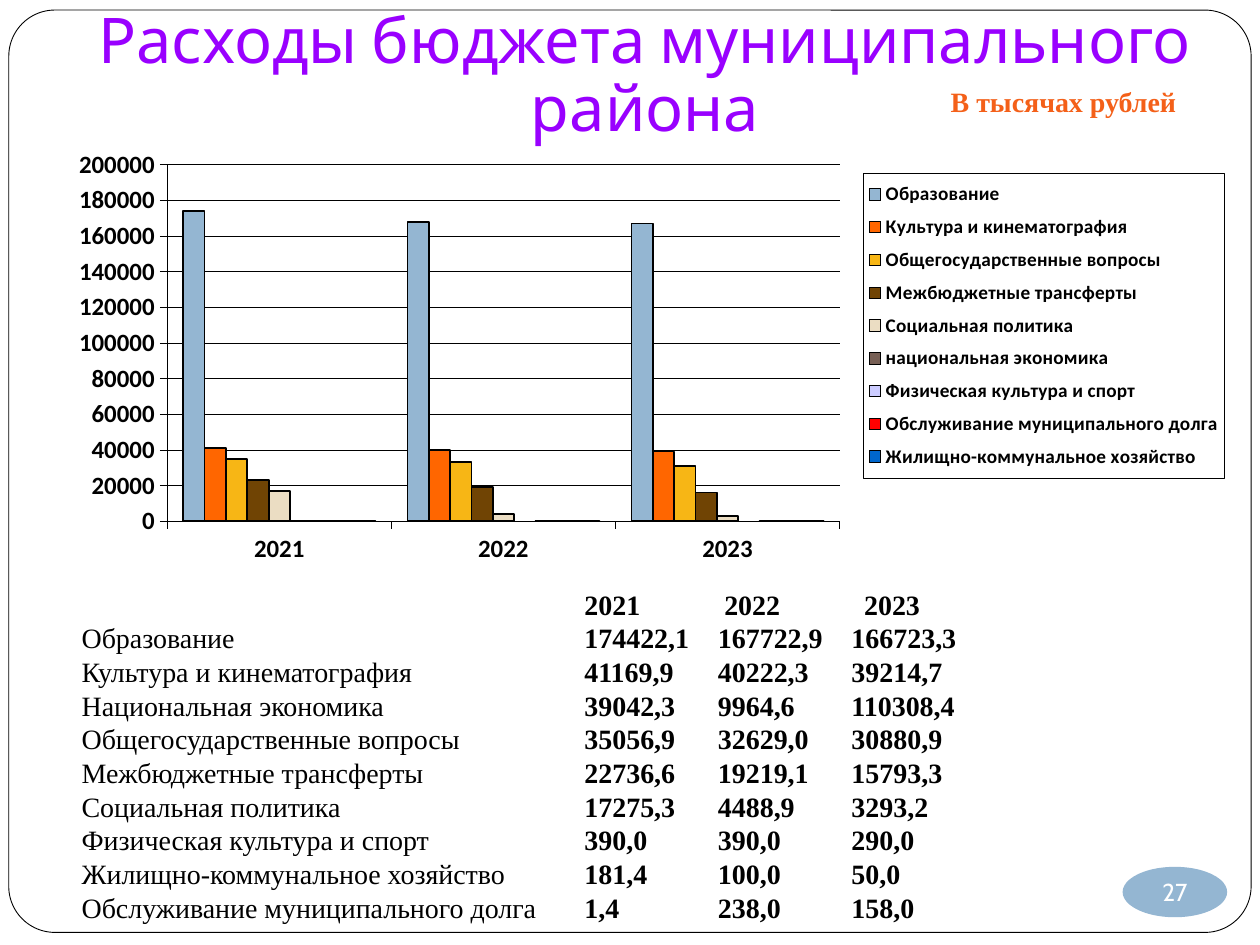
from lxml.etree import SubElement
from pptx import Presentation
from pptx.chart.data import CategoryChartData
from pptx.dml.color import RGBColor
from pptx.enum.chart import XL_CHART_TYPE, XL_LEGEND_POSITION, XL_TICK_LABEL_POSITION, XL_TICK_MARK
from pptx.enum.shapes import MSO_SHAPE
from pptx.enum.text import MSO_ANCHOR, PP_ALIGN
from pptx.oxml.ns import qn
from pptx.util import Inches, Pt

COLORS = {"black": "000000", "white": "FFFFFF", "title": "9900FF", "badge": "94B6D2"}
UNIT_GRADIENT = [(0, "FFA988"), (75, "F46019"), (100, "D85200")]
YEARS = ["2021", "2022", "2023"]
SERIES = [
    ("Образование", "94B6D2", (174000, 168000, 167000)),
    ("Культура и кинематография", "FF6600", (41000, 40000, 39000)),
    ("Общегосударственные вопросы", "F7B615", (35000, 33000, 31000)),
    ("Межбюджетные трансферты", "704404", (23000, 19000, 16000)),
    ("Социальная политика", "EBDDC3", (17000, 4000, 3000)),
    ("национальная экономика", "775F55", (0, None, None)),
    ("Физическая культура и спорт", "CCCCFF", (0, 0, 0)),
    ("Обслуживание муниципального долга", "FF0000", (0, 0, 0)),
    ("Жилищно-коммунальное хозяйство", "0066CC", (0, 0, 0)),
]
EXPENSES = [
    ("Образование", "174422,1", "167722,9", "166723,3"),
    ("Культура и кинематография", "41169,9", "40222,3", "39214,7"),
    ("Национальная экономика", "39042,3", "9964,6", "110308,4"),
    ("Общегосударственные вопросы", "35056,9", "32629,0", "30880,9"),
    ("Межбюджетные трансферты", "22736,6", "19219,1", "15793,3"),
    ("Социальная политика", "17275,3", "4488,9", "3293,2"),
    ("Физическая культура и спорт", "390,0", "390,0", "290,0"),
    ("Жилищно-коммунальное хозяйство", "181,4", "100,0", "50,0"),
    ("Обслуживание муниципального долга", "1,4", "238,0", "158,0"),
]
FIRST_TAB, HEADER_STEP, ROW_STEP = 3.99, 1.11, 1.06


def rgb(value):
    return RGBColor.from_string(value)


def inches(*box):
    return [Inches(length) for length in box]


def set_font(font, name, size, color=None, bold=False):
    font.name, font.size, font.bold = name, Pt(size), bold
    if color:
        font.color.rgb = rgb(color)


def set_line(line, width):
    line.color.rgb = rgb(COLORS["black"])
    line.width = Pt(width)


def add_plain_shape(page, kind, box, fill):
    shape = page.shapes.add_shape(kind, *inches(*box))
    shape.shadow.inherit = False
    shape.fill.solid()
    shape.fill.fore_color.rgb = rgb(fill)
    return shape


def add_text_frame(page, box):
    frame = page.shapes.add_textbox(*inches(*box)).text_frame
    frame.word_wrap = True
    return frame


def add_frame(page, box):
    frame = add_plain_shape(page, MSO_SHAPE.ROUNDED_RECTANGLE, box, COLORS["white"])
    frame.adjustments[0] = 0.05
    set_line(frame.line, 0.5)


def add_title(page, box):
    frame = add_text_frame(page, box)
    frame.vertical_anchor = MSO_ANCHOR.BOTTOM
    frame.margin_bottom = Inches(0.1)
    para = frame.paragraphs[0]
    para.text = "Расходы бюджета муниципального района"
    para.alignment, para.line_spacing = PP_ALIGN.CENTER, 0.9
    set_font(para.font, "Cabin", 36, COLORS["title"])


def add_page_number(page, box):
    badge = add_plain_shape(page, MSO_SHAPE.OVAL, box, COLORS["badge"])
    badge.line.fill.background()
    frame = badge.text_frame
    frame.margin_left = frame.margin_right = frame.margin_top = frame.margin_bottom = 0
    frame.word_wrap = False
    frame.vertical_anchor = MSO_ANCHOR.MIDDLE
    para = frame.paragraphs[0]
    para.text = "27"
    para.alignment = PP_ALIGN.CENTER
    set_font(para.font, "Cabin", 14, COLORS["white"])


def add_unit_note(page, box):
    para = add_text_frame(page, box).paragraphs[0]
    para.alignment = PP_ALIGN.CENTER
    span = para.add_run()
    span.text = "В тысячах рублей"
    set_font(span.font, "Times New Roman", 16, bold=True)
    span.font.fill.gradient()
    gradient = span.font.fill._xPr.find(qn("a:gradFill"))
    stops = gradient.find(qn("a:gsLst"))
    for stop in list(stops):
        stops.remove(stop)
    for percent, color in UNIT_GRADIENT:
        stop = SubElement(stops, qn("a:gs"), pos=str(percent * 1000))
        SubElement(stop, qn("a:srgbClr"), val=color)
    gradient.find(qn("a:lin")).set("ang", str(90 * 60000))


def place_chart_part(part, box, inner=False):
    """Give a plot area or legend a fixed place, in fractions of the chart."""
    layout = part.get_or_add_layout() if hasattr(part, "get_or_add_layout") else part.find(qn("c:layout"))
    if layout is None:
        layout = SubElement(part, qn("c:layout"))
        part.insert(0, layout)
    for child in list(layout):
        layout.remove(child)
    manual = SubElement(layout, qn("c:manualLayout"))
    if inner:
        SubElement(manual, qn("c:layoutTarget"), val="inner")
    for side in ("xMode", "yMode"):
        SubElement(manual, qn(f"c:{side}"), val="edge")
    for side, value in zip("xywh", box):
        SubElement(manual, qn(f"c:{side}"), val=str(value))


def add_legend(chart):
    chart.has_legend = True
    legend = chart.legend
    legend.position = XL_LEGEND_POSITION.RIGHT
    legend.include_in_layout = False
    set_font(legend.font, "Calibri", 11, COLORS["black"], True)
    element = legend._element
    place_chart_part(element, (0.67, 0.06, 0.3, 0.7))
    outline = element.makeelement(qn("c:spPr"))
    element.find(qn("c:txPr")).addprevious(outline)
    line = SubElement(outline, qn("a:ln"), w=str(Pt(0.25)))
    SubElement(SubElement(line, qn("a:solidFill")), qn("a:srgbClr"), val=COLORS["black"])


def add_expense_chart(page, box):
    data = CategoryChartData()
    data.categories = YEARS
    for name, _, values in SERIES:
        data.add_series(name, values)
    chart = page.shapes.add_chart(XL_CHART_TYPE.COLUMN_CLUSTERED, *inches(*box), data).chart
    chart.has_title = False
    set_font(chart.font, "Calibri", 14.2, COLORS["black"], True)
    plot = chart.plots[0]
    plot.gap_width, plot.overlap, plot.vary_by_categories = 150, 0, False
    for series, (_, color, _) in zip(plot.series, SERIES):
        series.format.fill.solid()
        series.format.fill.fore_color.rgb = rgb(color)
        set_line(series.format.line, 1)
    for axis in (chart.category_axis, chart.value_axis):
        set_line(axis.format.line, 0.25)
        axis.major_tick_mark = XL_TICK_MARK.OUTSIDE
        set_font(axis.tick_labels.font, "Calibri", 14.2, COLORS["black"], True)
    chart.category_axis.tick_label_position = XL_TICK_LABEL_POSITION.LOW
    values = chart.value_axis
    values.minimum_scale, values.maximum_scale, values.major_unit = 0, 200000, 20000
    values.tick_labels.number_format, values.tick_labels.number_format_is_linked = "0", False
    set_line(values.major_gridlines.format.line, 0.25)
    place_chart_part(chart._chartSpace.chart.plotArea, (0.09, 0.04, 0.56, 0.82), inner=True)
    add_legend(chart)


def add_expense_list(page, box):
    frame = add_text_frame(page, box)
    for index, (label, *amounts) in enumerate([("", *YEARS)] + EXPENSES):
        para = frame.add_paragraph() if index else frame.paragraphs[0]
        set_font(para.font, "Times New Roman", 16, COLORS["black"])
        para.line_spacing = Pt(19.25)
        step = ROW_STEP if index else HEADER_STEP
        tabs = para._p.get_or_add_pPr().makeelement(qn("a:tabLst"))
        para._p.pPr.find(qn("a:defRPr")).addprevious(tabs)
        for column in range(len(amounts)):
            SubElement(tabs, qn("a:tab"), pos=str(Inches(FIRST_TAB + column * step)), algn="l")
        if label:
            para.add_run().text = label
        span = para.add_run()
        span.text = "".join(f"\t{amount}" for amount in amounts)
        span.font.bold = True


def main():
    deck = Presentation()
    deck.slide_width, deck.slide_height = inches(10, 7.5)
    page = deck.slides.add_slide(deck.slide_layouts[6])
    add_frame(page, (0.07, 0.08, 9.86, 7.32))
    add_title(page, (0.62, 0.47, 9, 0.78))
    add_page_number(page, (8.91, 6.88, 0.83, 0.4))
    add_expense_chart(page, (0.47, 1.17, 9.53, 3.45))
    add_unit_note(page, (6.88, 0.62, 3.12, 0.37))
    add_expense_list(page, (0.55, 4.61, 9.06, 2.83))
    deck.save("out.pptx")


if __name__ == "__main__":
    main()
